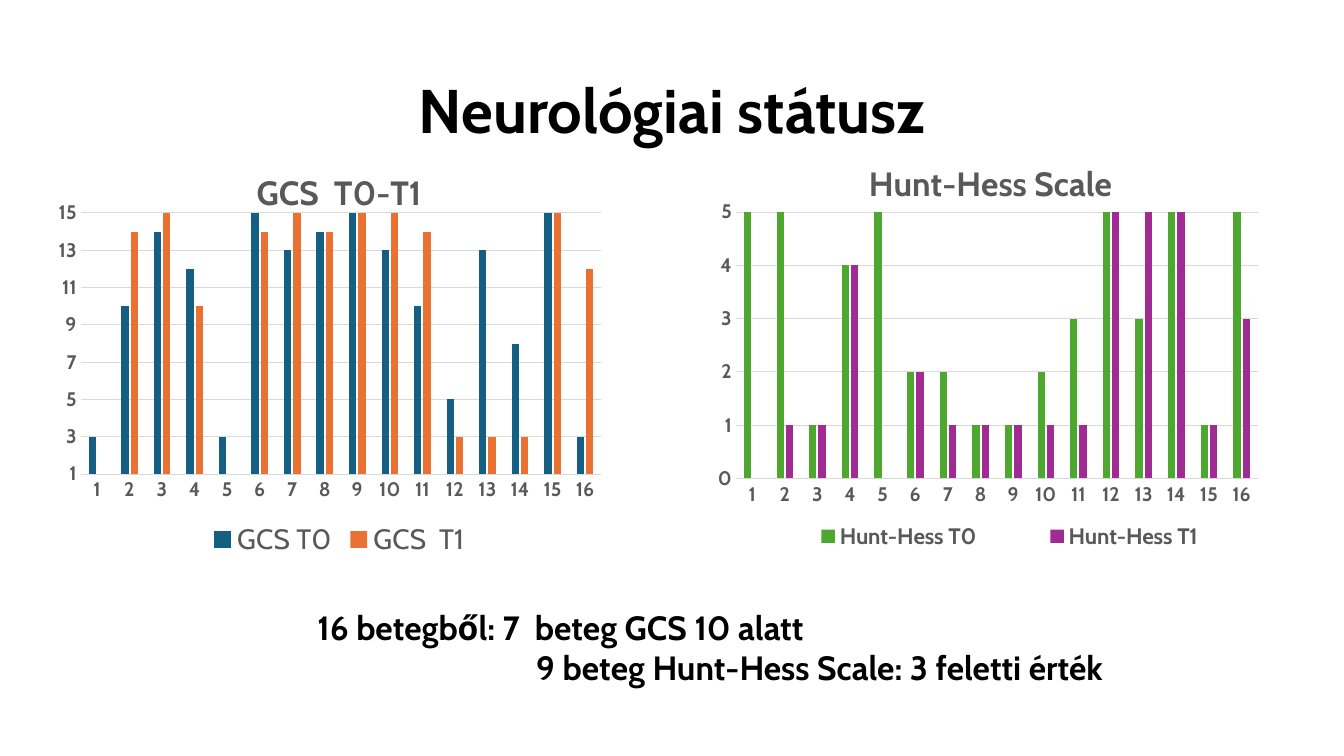
from lxml import etree
from pptx import Presentation
from pptx.chart.data import CategoryChartData
from pptx.dml.color import RGBColor
from pptx.enum.chart import XL_CHART_TYPE, XL_LEGEND_POSITION, XL_TICK_MARK
from pptx.enum.text import MSO_ANCHOR, PP_ALIGN
from pptx.oxml.ns import qn
from pptx.util import Inches, Pt

CLUSTERED = XL_CHART_TYPE.COLUMN_CLUSTERED
LEGEND_BOTTOM = XL_LEGEND_POSITION.BOTTOM
NO_TICK = XL_TICK_MARK.NONE
MIDDLE = MSO_ANCHOR.MIDDLE
CENTER, LEFT = PP_ALIGN.CENTER, PP_ALIGN.LEFT

FONT = "Cabin"
COLORS = {
    "text": "000000", "label": "595959", "grid": "D9D9D9",
    "blue": "156082", "orange": "E97132",
    "green": "4EA72E", "purple": "A02B93",
}
PATIENTS = [str(number) for number in range(1, 17)]

HUNT_HESS = {
    "title": "Hunt-Hess Scale", "title_at": (0.305, 0.02),
    "plot_at": (0.111, 0.16, 0.799, 0.637),
    "legend_at": (0.14, 0.89, 0.78, 0.09),
    "legend_size": 16, "legend_bold": True,
    "scale": (0, 5, 1),
    "series": [
        ("Hunt-Hess T0", "green", [5, 5, 1, 4, 5, 2, 2, 1, 1, 2, 3, 5, 3, 5, 1, 5]),
        ("Hunt-Hess T1", "purple", [None, 1, 1, 4, None, 2, 1, 1, 1, 1, 1, 5, 5, 5, 1, 3]),
    ],
}
GCS = {
    "title": "GCS  T0-T1", "title_at": (0.352, 0.02),
    "plot_at": (0.069, 0.144, 0.868, 0.64),
    "legend_at": None,
    "legend_size": 20, "legend_bold": False,
    "scale": (1, 15, 2),
    "series": [
        ("GCS T0", "blue", [3, 10, 14, 12, 3, 15, 13, 14, 15, 13, 10, 5, 13, 8, 15, 3]),
        ("GCS  T1", "orange", [None, 14, 15, 10, None, 14, 15, 14, 15, 15, 14, 3, 3, 3, 15, 12]),
    ],
}
FINDINGS = [
    (2.55, "16 betegből: 7  beteg GCS 10 alatt"),
    (4.72, "9 beteg Hunt-Hess Scale: 3 feletti érték"),
]


def rgb(name):
    return RGBColor.from_string(COLORS[name])


def style(font, size, color, bold=True):
    font.name = FONT
    font.size = Pt(size)
    font.bold = bold
    font.color.rgb = rgb(color)


def set_layout(element, index, shares, inner=False):
    for old in element.findall(qn("c:layout")):
        element.remove(old)
    layout = etree.Element(qn("c:layout"))
    manual = etree.SubElement(layout, qn("c:manualLayout"))
    settings = [("layoutTarget", "inner")] if inner else []
    settings += [("xMode", "edge"), ("yMode", "edge")]
    settings += zip("xywh", shares)
    for tag, value in settings:
        etree.SubElement(manual, qn(f"c:{tag}")).set("val", str(value))
    element.insert(index, layout)


def add_text(slide, box, lines, size, align):
    frame = slide.shapes.add_textbox(*map(Inches, box)).text_frame
    frame.word_wrap = True
    for position, (indent, wording) in enumerate(lines):
        paragraph = frame.add_paragraph() if position else frame.paragraphs[0]
        paragraph.alignment = align
        if indent:
            properties = paragraph._p.get_or_add_pPr()
            properties.set("marL", str(Inches(indent)))
            properties.set("indent", "0")
        run = paragraph.add_run()
        run.text = wording
        style(run.font, size, "text")
    return frame


def add_heading(slide, box):
    frame = add_text(slide, box, [(0, "Neurológiai státusz")], 44, CENTER)
    frame.vertical_anchor = MIDDLE
    frame.paragraphs[0].line_spacing = 0.9


def add_score_chart(slide, box, score):
    data = CategoryChartData()
    data.categories = PATIENTS
    for name, _, values in score["series"]:
        data.add_series(name, values)
    chart = slide.shapes.add_chart(CLUSTERED, *map(Inches, box), data).chart
    style(chart.font, 10, "text", False)

    chart.has_title = True
    heading = chart.chart_title
    run = heading.text_frame.paragraphs[0].add_run()
    run.text = score["title"]
    style(run.font, 24, "label")
    heading.include_in_layout = False
    set_layout(heading._element, 1, score["title_at"])

    columns = chart.plots[0]
    columns.gap_width = 219
    columns.overlap = -27
    columns.vary_by_categories = False
    for series, (_, color, _) in zip(columns.series, score["series"]):
        series.format.fill.solid()
        series.format.fill.fore_color.rgb = rgb(color)
        series.invert_if_negative = False
    set_layout(chart._chartSpace.chart.plotArea, 0, score["plot_at"], True)

    for axis in (chart.category_axis, chart.value_axis):
        axis.major_tick_mark = axis.minor_tick_mark = NO_TICK
        style(axis.tick_labels.font, 14, "label")
    values = chart.value_axis
    values.minimum_scale, values.maximum_scale, values.major_unit = score["scale"]
    values.format.line.fill.background()
    values.has_major_gridlines = True
    for line in (chart.category_axis.format.line, values.major_gridlines.format.line):
        line.color.rgb = rgb("grid")
        line.width = Pt(0.75)

    chart.has_legend = True
    legend = chart.legend
    legend.position = LEGEND_BOTTOM
    legend.include_in_layout = False
    style(legend.font, score["legend_size"], "label", score["legend_bold"])
    if score["legend_at"]:
        set_layout(legend._element, 1, score["legend_at"])


def main():
    deck = Presentation()
    deck.slide_width, deck.slide_height = Inches(13.33), Inches(7.5)
    slide = deck.slides.add_slide(deck.slide_layouts[6])
    add_heading(slide, (0.92, 0.4, 11.5, 1.45))
    add_score_chart(slide, (6.58, 1.44, 6.48, 4.15), HUNT_HESS)
    add_score_chart(slide, (0.39, 1.53, 5.95, 4.05), GCS)
    add_text(slide, (0.5, 5.97, 12.18, 0.91), FINDINGS, 24, LEFT)
    deck.save("out.pptx")


if __name__ == "__main__":
    main()
